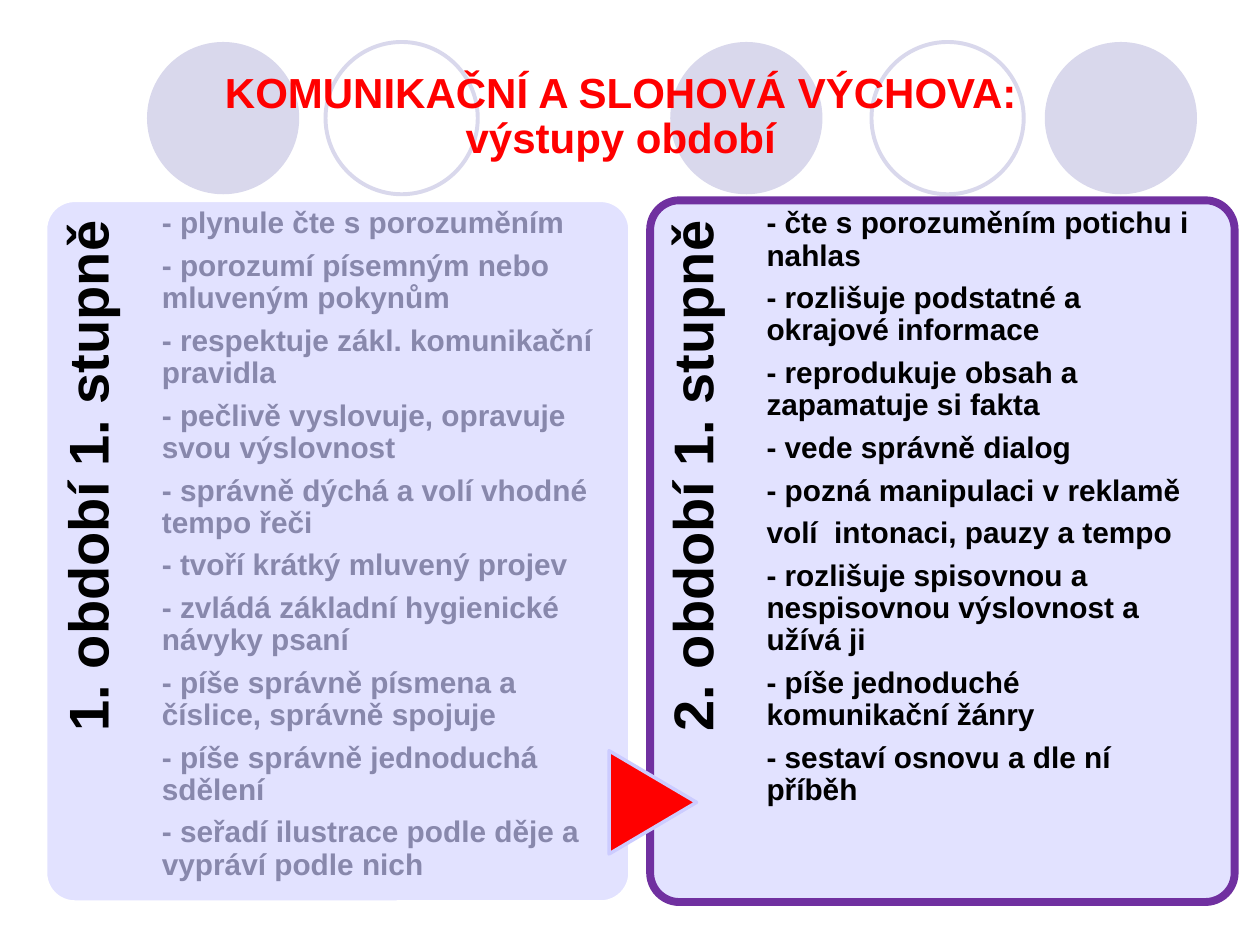
from dataclasses import dataclass

from pptx import Presentation
from pptx.dml.color import RGBColor
from pptx.enum.shapes import MSO_SHAPE
from pptx.enum.text import MSO_ANCHOR, MSO_AUTO_SIZE, PP_ALIGN
from pptx.oxml.ns import qn
from pptx.util import Pt


@dataclass(frozen=True)
class Theme:
    font: str = "Arial"
    circle: str = "D9D8EC"
    panel: str = "E2E2FF"
    white: str = "FFFFFF"
    purple: str = "7030A0"
    red: str = "FF0000"
    lilac: str = "CCCCFF"
    black: str = "000000"
    muted: str = "8888AC"
    title_size: int = 24
    label_size: int = 32
    list_size: int = 17


THEME = Theme()

TITLE = "KOMUNIKAČNÍ A SLOHOVÁ VÝCHOVA: výstupy období"
FIRST_PERIOD = [
    "- plynule čte s porozuměním",
    "- porozumí písemným nebo mluveným pokynům",
    "- respektuje zákl. komunikační pravidla",
    "- pečlivě vyslovuje, opravuje svou výslovnost",
    "- správně dýchá a volí vhodné tempo řeči",
    "- tvoří krátký mluvený projev",
    "- zvládá základní hygienické návyky psaní",
    "- píše správně písmena a číslice, správně spojuje",
    "- píše správně jednoduchá sdělení",
    "- seřadí ilustrace podle děje a vypráví podle nich",
]
SECOND_PERIOD = [
    "- čte s porozuměním potichu i nahlas",
    "- rozlišuje podstatné a okrajové informace",
    "- reprodukuje obsah a zapamatuje si fakta",
    "- vede správně dialog",
    "- pozná manipulaci v reklamě",
    "volí  intonaci, pauzy a tempo",
    "- rozlišuje spisovnou a nespisovnou výslovnost a užívá ji",
    "- píše jednoduché komunikační žánry",
    "- sestaví osnovu a dle ní příběh",
]

CIRCLES = [(84, True), (186, False), (383, True), (498, False), (597, True)]
CIRCLE_TOP, CIRCLE_SIZE = 24, 87
PANEL_LEFTS = (26, 371.5)
PANEL_TOP, PANEL_WIDTH, PANEL_HEIGHT = 114.5, 334, 401
LABEL_LENGTH, LABEL_HEIGHT = 329, 67
LIST_OFFSET, LIST_WIDTH = 66.5, 249


def color(value):
    return RGBColor.from_string(value)


def place(shape, left, top, width, height):
    shape.left, shape.top = Pt(left), Pt(top)
    shape.width, shape.height = Pt(width), Pt(height)


def add_shape(slide, kind, box, fill=None, line=None, line_width=0):
    shape = slide.shapes.add_shape(kind, *map(Pt, box))
    shape.shadow.inherit = False
    if fill:
        shape.fill.solid()
        shape.fill.fore_color.rgb = color(fill)
    else:
        shape.fill.background()
    if line:
        shape.line.color.rgb = color(line)
        shape.line.width = Pt(line_width)
    else:
        shape.line.fill.background()
    return shape


def set_frame(frame, margins):
    frame.word_wrap = True
    frame.auto_size = MSO_AUTO_SIZE.NONE
    frame.vertical_anchor = MSO_ANCHOR.TOP
    (frame.margin_left, frame.margin_top,
     frame.margin_right, frame.margin_bottom) = map(Pt, margins)


def format_paragraph(paragraph, size, text_color, align, before=0, after=0):
    paragraph.alignment = align
    paragraph.line_spacing = 0.9
    paragraph.space_before, paragraph.space_after = Pt(before), Pt(after)
    font = paragraph.font
    font.name, font.size, font.bold = THEME.font, Pt(size), True
    font.color.rgb = color(text_color)


def bring_to_front(shape):
    shape.element.getparent().append(shape.element)


def add_circles(slide):
    for left, filled in CIRCLES:
        box = (left, CIRCLE_TOP, CIRCLE_SIZE, CIRCLE_SIZE)
        if filled:
            add_shape(slide, MSO_SHAPE.OVAL, box, THEME.circle)
        else:
            add_shape(slide, MSO_SHAPE.OVAL, box, None, THEME.circle, 2.25)


def add_panel(slide, left, line, line_width):
    box = (left, PANEL_TOP, PANEL_WIDTH, PANEL_HEIGHT)
    panel = add_shape(slide, MSO_SHAPE.ROUNDED_RECTANGLE, box,
                      THEME.panel, line, line_width)
    panel.adjustments[0] = 0.05


def add_label(slide, panel_left, text):
    left = panel_left + (LABEL_HEIGHT - LABEL_LENGTH) / 2
    top = PANEL_TOP + (LABEL_LENGTH - LABEL_HEIGHT) / 2
    label = slide.shapes.add_textbox(
        Pt(left), Pt(top), Pt(LABEL_LENGTH), Pt(LABEL_HEIGHT))
    label.rotation = 270
    set_frame(label.text_frame, (0, 8.5, 11.5, 0))
    label.text_frame.text = text
    format_paragraph(label.text_frame.paragraphs[0], THEME.label_size,
                     THEME.black, PP_ALIGN.RIGHT)


def fill_list(placeholder, panel_left, items, text_color):
    place(placeholder, panel_left + LIST_OFFSET, PANEL_TOP,
          LIST_WIDTH, PANEL_HEIGHT)
    frame = placeholder.text_frame
    set_frame(frame, (0, 4.5, 0, 0))
    frame.text = "\n".join(items)
    for paragraph in frame.paragraphs:
        format_paragraph(paragraph, THEME.list_size, text_color,
                         PP_ALIGN.LEFT, after=6)
        properties = paragraph._p.get_or_add_pPr()
        properties.set("marL", "0")
        properties.set("indent", "0")
        bullet = properties.makeelement(qn("a:buNone"), {})
        properties.find(qn("a:defRPr")).addprevious(bullet)
    bring_to_front(placeholder)


def fill_title(placeholder):
    place(placeholder, 99.5, 37.5, 510.5, 60)
    set_frame(placeholder.text_frame, (7.2, 3.6, 7.2, 3.6))
    placeholder.text_frame.text = TITLE
    format_paragraph(placeholder.text_frame.paragraphs[0], THEME.title_size,
                     THEME.red, PP_ALIGN.CENTER, before=4.8)
    bring_to_front(placeholder)


def add_arrow(slide):
    arrow = add_shape(slide, MSO_SHAPE.FLOWCHART_EXTRACT,
                      (343.5, 433.5, 59, 50), THEME.red, THEME.lilac, 2)
    arrow.rotation = 90


def main():
    presentation = Presentation()
    presentation.slide_width, presentation.slide_height = Pt(720), Pt(540)
    slide = presentation.slides.add_slide(presentation.slide_layouts[3])
    title, first_list, second_list = slide.placeholders
    first_left, second_left = PANEL_LEFTS

    add_circles(slide)
    add_panel(slide, first_left, THEME.white, 2)
    add_label(slide, first_left, "1. období 1. stupně")
    fill_list(first_list, first_left, FIRST_PERIOD, THEME.muted)
    add_panel(slide, second_left, THEME.purple, 4.5)
    add_label(slide, second_left, "2. období 1. stupně")
    add_arrow(slide)
    fill_list(second_list, second_left, SECOND_PERIOD, THEME.black)
    fill_title(title)
    presentation.save("out.pptx")


if __name__ == "__main__":
    main()
